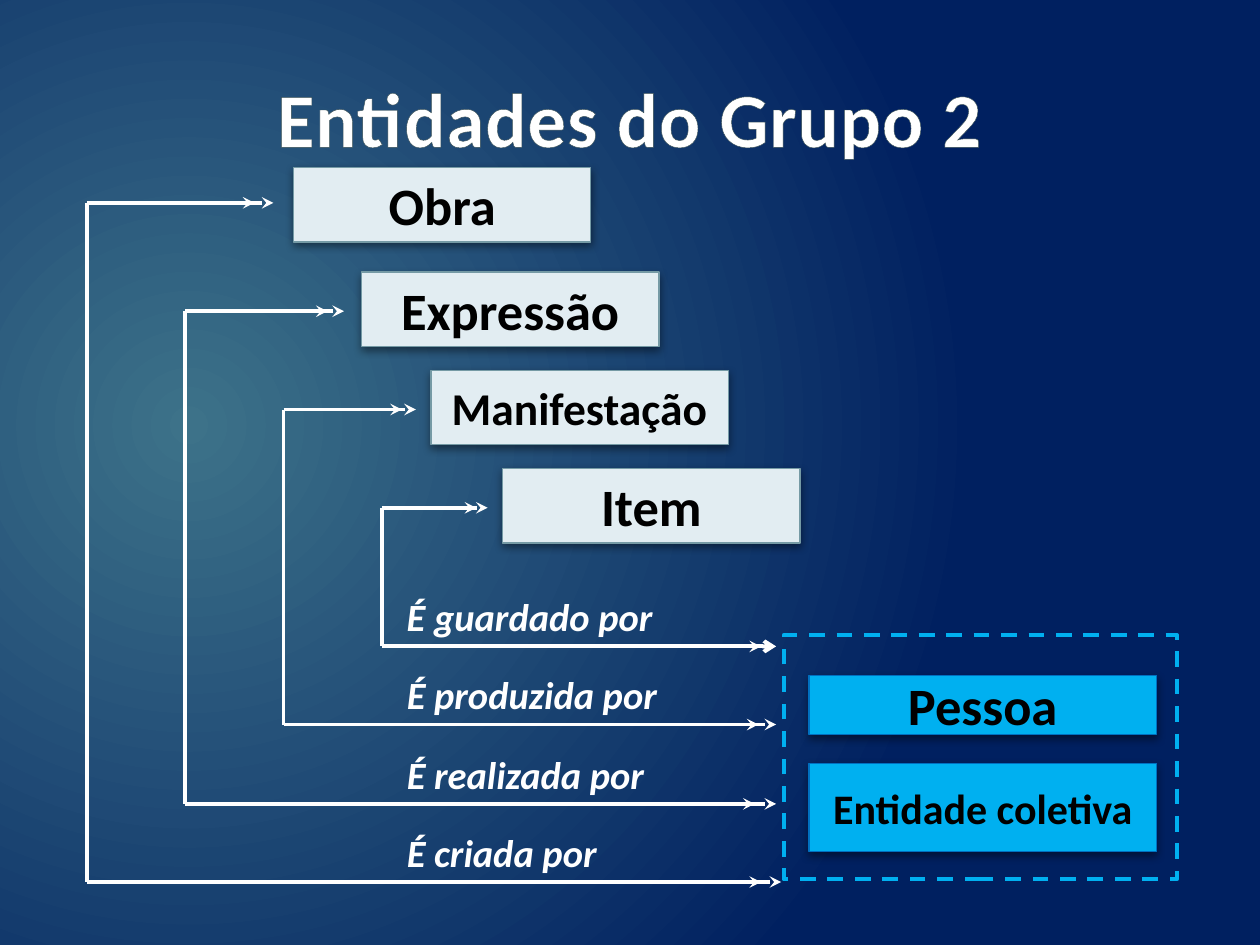
import pptx
import pptx.dml.color
import pptx.enum.dml
import pptx.enum.shapes
import pptx.enum.text
import pptx.oxml.ns
import pptx.util
from lxml import etree

Inches = pptx.util.Inches
Pt = pptx.util.Pt
RGB = pptx.dml.color.RGBColor
qn = pptx.oxml.ns.qn
ALIGN = pptx.enum.text.PP_ALIGN
MIDDLE = pptx.enum.text.MSO_ANCHOR.MIDDLE

TEAL = RGB(0x3D, 0x72, 0x89)
NAVY = RGB(0x00, 0x20, 0x60)
WHITE = RGB(0xFF, 0xFF, 0xFF)
BLACK = RGB(0x00, 0x00, 0x00)
PALE = RGB(0xE2, 0xED, 0xF2)
SLATE = RGB(0x75, 0x9A, 0xA5)
CYAN = RGB(0x00, 0xB0, 0xF0)
BLUE = RGB(0x00, 0x70, 0xC0)
EDGE = RGB(0x38, 0x4F, 0x55)

ENTITY = {"name": "Calibri", "bold": True}
LABEL = {"name": "Calibri", "bold": True, "italic": True, "size": Pt(22)}
TITLE = {"name": "Calibri", "bold": True, "size": Pt(44)}

# name, size, box x, box y, lane x, top y, tip x, inner tip x
# label, label width, base y, tip x, inner tip x, inner length, head
FLOWS = [
    (("Obra", 30, 2.33, 1.33), (0.69, 1.61, 2.17, 2.02),
     ("É criada por", 2.05), (7, 6.2, 6.04), 0.32, "stealth"),
    (("Expressão", 30, 2.87, 2.16), (1.47, 2.47, 2.73, 2.6),
     ("É realizada por", 2.18), (6.38, 6.16, 5.99), 0.27, "stealth"),
    (("Manifestação", 26, 3.42, 2.94), (2.25, 3.25, 3.3, 3.19),
     ("É produzida por", 2.28), (5.75, 6.16, 6.02), 0.22, "stealth"),
    (("Item", 30, 3.99, 3.72), (3.03, 4.03, 3.87, 3.78),
     ("É guardado por", 2.53), (5.13, 6.16, 6.04), 0.17, "arrow"),
]


def style(item, values):
    for key, value in values.items():
        setattr(item, key, value)


def node(parent, tag, **values):
    return etree.SubElement(parent, qn(tag), values)


def write(frame, text, values, color, align):
    para = frame.paragraphs[0]
    para.alignment = align
    run = para.add_run()
    run.text = text
    style(run.font, values)
    run.font.color.rgb = color
    return run


def add_rect(slide, box, line, width):
    rect = slide.shapes.add_shape(
        pptx.enum.shapes.MSO_SHAPE.RECTANGLE, *map(Inches, box))
    rect.shadow.inherit = False
    rect.line.color.rgb = line
    rect.line.width = Pt(width)
    return rect


def add_card(slide, box, text, size, fill, line):
    card = add_rect(slide, box, line, 0.75)
    card.fill.solid()
    card.fill.fore_color.rgb = fill
    glow = node(card.element.spPr.find(qn("a:effectLst")), "a:outerShdw",
                blurRad=str(Pt(5)), dist=str(Pt(2)), dir="5400000",
                algn="ctr", rotWithShape="0")
    node(node(glow, "a:srgbClr", val=str(BLACK)), "a:alpha", val="43000")
    style(card.text_frame, {"word_wrap": True, "vertical_anchor": MIDDLE})
    write(card.text_frame, text, {**ENTITY, "size": Pt(size)}, BLACK, ALIGN.CENTER)


def add_line(slide, start, end, head=None):
    line = slide.shapes.add_connector(
        pptx.enum.shapes.MSO_CONNECTOR.STRAIGHT, *map(Inches, start + end))
    line.line.color.rgb = WHITE
    line.line.width = Pt(2.25)
    if head:
        node(line.line._get_or_add_ln(), "a:tailEnd", type=head)
    node(line.element.spPr, "a:effectLst")


def add_label(slide, box, text):
    label = slide.shapes.add_textbox(*map(Inches, box))
    style(label.text_frame, {
        "word_wrap": True,
        "auto_size": pptx.enum.text.MSO_AUTO_SIZE.SHAPE_TO_FIT_TEXT})
    write(label.text_frame, text, LABEL, WHITE, ALIGN.LEFT)


def draw_back(slide):
    fill = slide.background.fill
    fill.gradient()
    for stop, color in zip(fill.gradient_stops, (TEAL, NAVY)):
        stop.color.rgb = color
    grad = slide.element.find(".//" + qn("a:gradFill"))
    grad.remove(grad.find(qn("a:lin")))
    node(node(grad, "a:path", path="circle"), "a:fillToRect",
         l="15000", t="50000", r="85000", b="60000")


def draw_title(slide, box, text):
    title = slide.shapes.title
    style(title, dict(zip(("left", "top", "width", "height"), map(Inches, box))))
    title.text_frame.vertical_anchor = MIDDLE
    run = write(title.text_frame, text, TITLE, WHITE, ALIGN.CENTER)
    props = run.font._element
    props.set("spc", "50")
    edge = node(props, "a:ln", w=str(Pt(1.05)))
    node(node(edge, "a:solidFill"), "a:srgbClr", val=str(EDGE))
    props.insert(0, edge)


def draw_flow(slide, card, lane, label, base, size, head):
    name, points, left, top = card
    x, high, tip, inner = lane
    low, end, mark = base
    add_card(slide, (left, top, 2.36, 0.59), name, points, PALE, SLATE)
    add_label(slide, (3.13, low - 0.47, label[1], 0.47), label[0])
    add_line(slide, (x, high), (tip, high), "stealth")
    add_line(slide, (x, high), (x, low))
    add_line(slide, (x, low), (end, low), head)
    for stop, y in ((inner, high), (mark, low)):
        add_line(slide, (stop - size, y), (stop, y), "stealth")


def draw_group(slide, box):
    left, top, width, height = box
    frame = add_rect(slide, box, CYAN, 2.25)
    frame.fill.background()
    frame.line.dash_style = pptx.enum.dml.MSO_LINE.DASH
    for text, size, drop, tall in (("Pessoa", 30, 0.32, 0.47),
                                   ("Entidade coletiva", 24, 1.02, 0.7)):
        add_card(slide, (left + 0.2, top + drop, width - 0.36, tall),
                 text, size, CYAN, BLUE)


def main():
    deck = pptx.Presentation()
    style(deck, {"slide_width": Inches(10), "slide_height": Inches(7.5)})
    slide = deck.slides.add_slide(deck.slide_layouts[5])
    draw_back(slide)
    draw_title(slide, (0.5, 0.3, 9, 1.25), "Entidades do Grupo 2")
    draw_group(slide, (6.22, 5.04, 3.12, 1.94))
    for flow in FLOWS:
        draw_flow(slide, *flow)
    deck.save("out.pptx")


if __name__ == "__main__":
    main()
